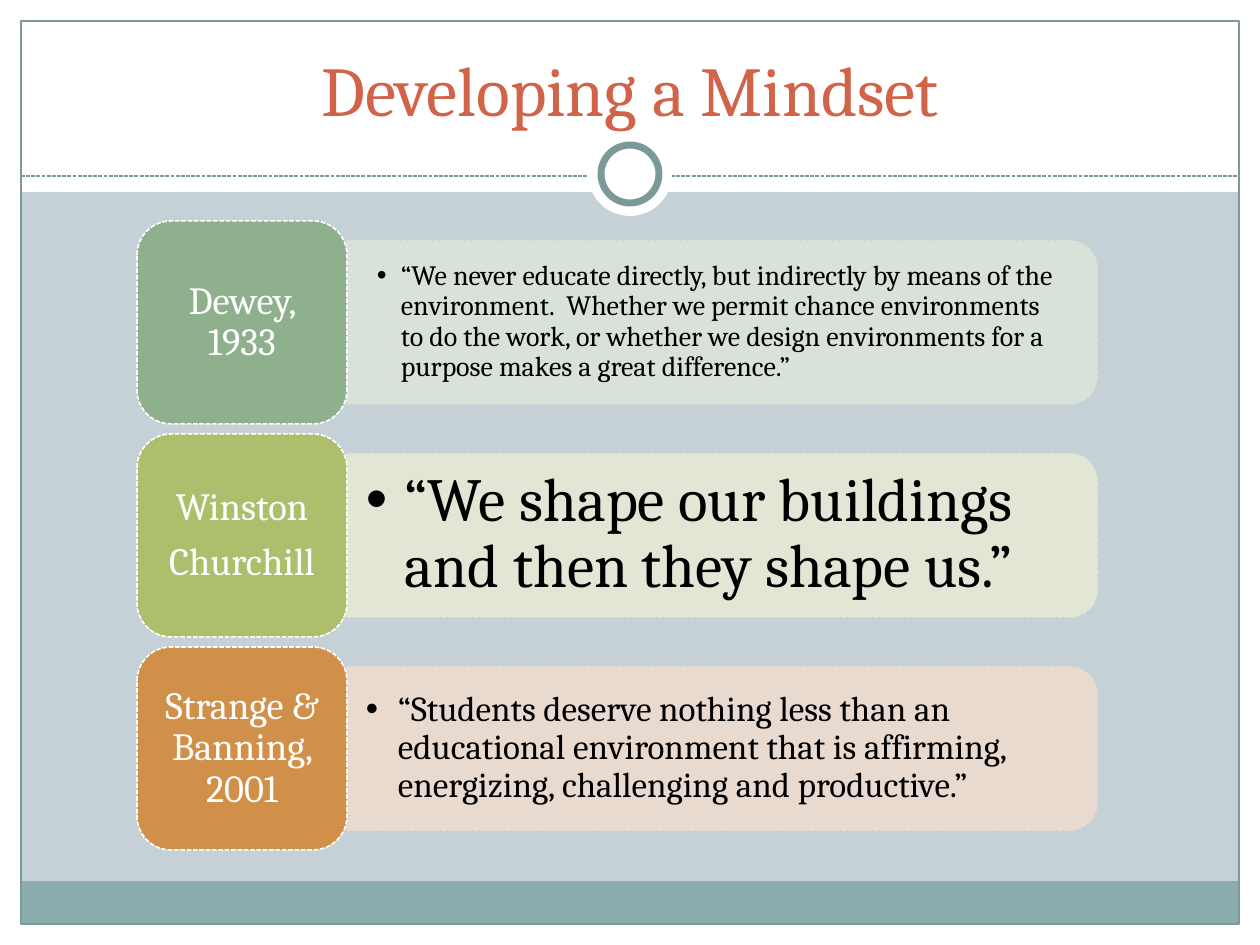
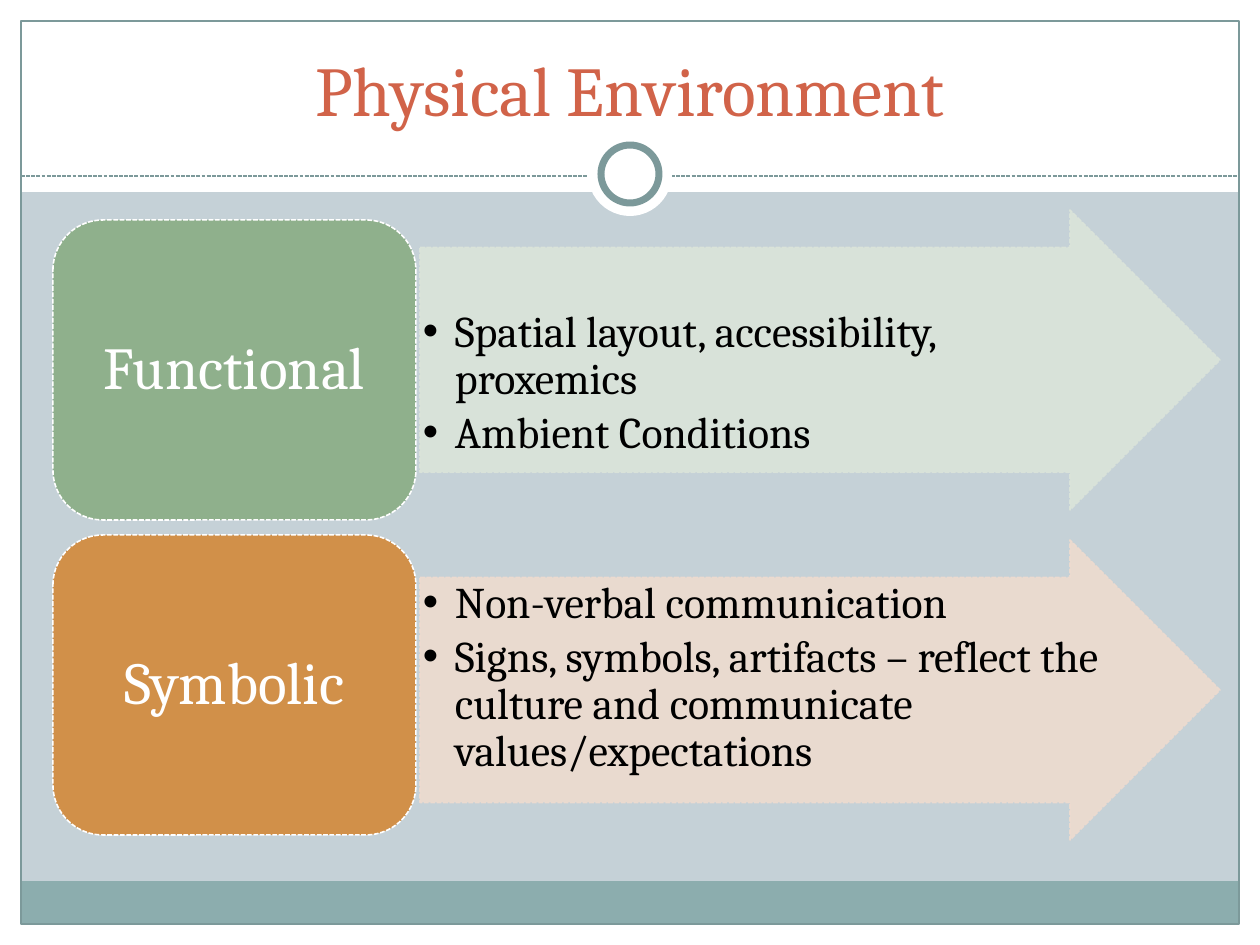
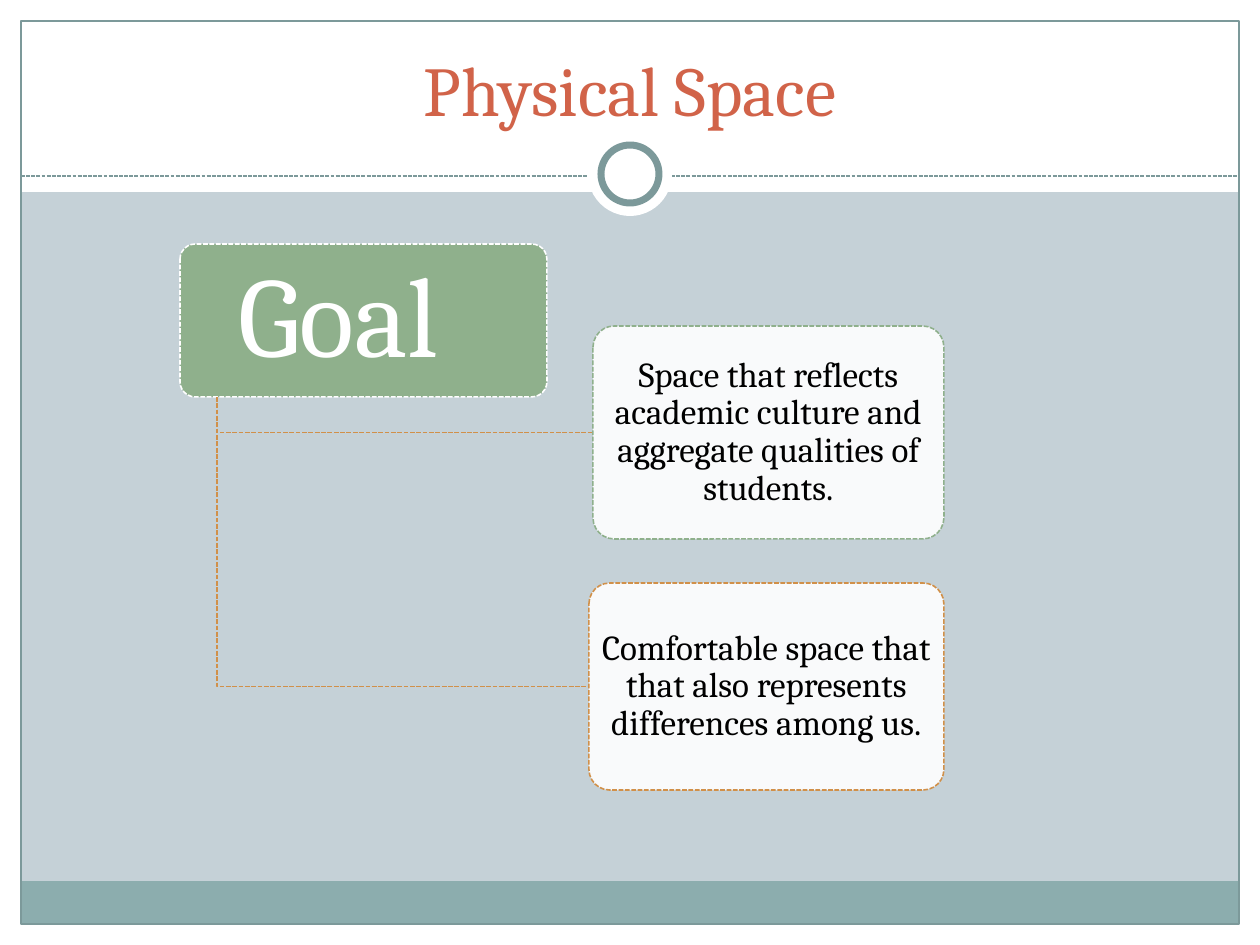
from pptx import Presentation
from pptx.dml.color import RGBColor
from pptx.enum.dml import MSO_LINE as Dash
from pptx.enum.shapes import MSO_CONNECTOR as Conn, MSO_SHAPE as Kind
from pptx.enum.text import MSO_ANCHOR as Anchor, PP_ALIGN as Align
from pptx.oxml.ns import qn
from pptx.util import Emu, Pt
from lxml.etree import SubElement as Sub

# Colours and font
WHITE = RGBColor(0xFF, 0xFF, 0xFF)
BLACK = RGBColor(0x00, 0x00, 0x00)
BACK = RGBColor(0xC5, 0xD1, 0xD7)
BAND = RGBColor(0x8C, 0xAD, 0xAE)
RULE = RGBColor(0x7C, 0x99, 0x9A)
RED = RGBColor(0xD1, 0x63, 0x49)
GREEN = RGBColor(0x8F, 0xB0, 0x8C)
LIME = RGBColor(0xAD, 0xBF, 0x6C)
OCHRE = RGBColor(0xD1, 0x90, 0x49)
MINT = RGBColor(0xDB, 0xE4, 0xDA)
CREAM = RGBColor(0xE6, 0xE9, 0xD5)
PEACH = RGBColor(0xEE, 0xDB, 0xCF)
FONT = "Cambria"

# Content: label, colour, quote, tint, size, indent, side and top inset
QUOTES = [
    (["Dewey, 1933"], GREEN,
     "“We never educate directly, but indirectly by means of the environment.  "
     "Whether we permit chance environments to do the work, or whether we "
     "design environments for a purpose makes a great difference.”",
     MINT, 16, 24, 30, 15),
    (["Winston", "Churchill"], LIME,
     "“We shape our buildings and then they shape us.”",
     CREAM, 35, 39, 19, 9),
    (["Strange & Banning, 2001"], OCHRE,
     "“Students deserve nothing less than an educational environment that is "
     "affirming, energizing, challenging and productive.”",
     PEACH, 20, 32, 19, 9),
]
# Label, colour, points, tint, label top, arrow top, inset above the points
ASPECTS = [
    ("Functional", GREEN, ["Spatial layout, accessibility, proxemics",
                           "Ambient Conditions"], MINT, 220, 210, 62),
    ("Symbolic", OCHRE, ["Non-verbal communication",
                         "Signs, symbols, artifacts – reflect the culture and "
                         "communicate values/expectations"],
     PEACH, 535, 540, 3),
]
# Text, edge colour, place
GOALS = [
    ("Space that reflects academic culture and aggregate qualities of students.",
     GREEN, (593, 326, 351, 213)),
    ("Comfortable space that that also represents differences among us.",
     OCHRE, (589, 583, 355, 207)),
]

# Page, in px
WIDE, HIGH = 1260, 945
EDGE, TOP = 21, 192
SCALE = 914400 / 126


def px(n):
    return Emu(round(n * SCALE))


def stroke(line, color, width, dashed):
    line.color.rgb = color
    line.width = Pt(width)
    if dashed:
        line.dash_style = Dash.SQUARE_DOT


def box(slide, kind, place, fill=None, edge=None, width=0.9, dashed=True,
        adj=(), alpha=None):
    """Add a shape; alpha applies to every part in the fill colour."""
    shape = slide.shapes.add_shape(kind, *map(px, place))
    shape.shadow.inherit = False
    for i, part in enumerate(adj):
        shape.adjustments[i] = part
    if fill is None:
        shape.fill.background()
    else:
        shape.fill.solid()
        shape.fill.fore_color.rgb = fill
    if edge is None:
        shape.line.fill.background()
    else:
        stroke(shape.line, edge, width, dashed)
    if alpha:
        for tone in list(shape._element.spPr.iter(qn("a:srgbClr"))):
            if tone.get("val") == str(fill):
                Sub(tone, qn("a:alpha"), val=str(alpha * 1000))
    return shape


def write(shape, lines, size, color, inset, anchor=Anchor.MIDDLE,
          indent=0, after=0.35, space=0.9):
    """Fill a shape with text; an indent makes the lines bullets."""
    frame = shape.text_frame
    frame.word_wrap = True
    frame.vertical_anchor = anchor
    (frame.margin_left, frame.margin_top,
     frame.margin_right, frame.margin_bottom) = map(px, inset)
    for i, line in enumerate(lines):
        para = frame.add_paragraph() if i else frame.paragraphs[0]
        para.alignment = Align.LEFT if indent else Align.CENTER
        para.line_spacing = space
        para.space_after = Pt(size * after)
        if indent:
            props = para._p.get_or_add_pPr()
            props.set("marL", str(px(indent)))
            props.set("indent", str(px(-indent)))
            Sub(props, qn("a:buFont"), typeface="Arial")
            Sub(props, qn("a:buChar"), char="•")
        run = para.add_run()
        run.text = line
        run.font.name = FONT
        run.font.size = Pt(size)
        run.font.color.rgb = color


def text(slide, place, *args, **opts):
    write(slide.shapes.add_textbox(*map(px, place)), *args, **opts)


def start(deck, title):
    """Add a slide with the shared bands, frame, ring and title."""
    slide = deck.slides.add_slide(deck.slide_layouts[6])
    slide.background.fill.solid()
    slide.background.fill.fore_color.rgb = BACK
    low = HIGH - EDGE
    for place, fill in [((0, low, WIDE, EDGE), WHITE),
                        ((0, 0, WIDE, TOP), WHITE),
                        ((0, 0, EDGE, HIGH), WHITE),
                        ((WIDE - EDGE, 0, EDGE, HIGH), WHITE),
                        ((EDGE, 881, WIDE - 2 * EDGE, 43), BAND)]:
        box(slide, Kind.RECTANGLE, place, fill)
    box(slide, Kind.RECTANGLE, (EDGE, EDGE, WIDE - 2 * EDGE, low - EDGE),
        edge=RULE, width=0.75, dashed=False)
    rule = slide.shapes.add_connector(
        Conn.STRAIGHT, px(EDGE), px(176), px(WIDE - EDGE), px(176))
    stroke(rule.line, RULE, 0.75, True)
    Sub(rule._element.spPr, qn("a:effectLst"))
    box(slide, Kind.OVAL, (588, 132, 84, 84), WHITE)
    box(slide, Kind.OVAL, (601, 145, 58, 58), WHITE, RULE, 4, False)
    text(slide, (42, 31, 1176, 105), [title], 40, RED, (13, 6, 13, 6),
         anchor=Anchor.BOTTOM, after=0, space=1)
    return slide


def mindset(deck):
    slide = start(deck, "Developing a Mindset")
    left, wide, high, step = 347, 750, 163, 213
    for i, (label, color, quote, tint, size, indent, side, top) in enumerate(QUOTES):
        y = 241 + i * step
        # The bar stands upright and is turned about its centre
        bar = box(slide, Kind.ROUND_2_SAME_RECTANGLE,
                  (left + (wide - high) / 2, y - (wide - high) / 2, high, wide),
                  tint, tint, alpha=90)
        bar.rotation = 90
        text(slide, (left, y + 8, 742, 146), [quote], size, BLACK,
             (side, top, side, top), indent=indent, after=0.15)
        name = box(slide, Kind.ROUNDED_RECTANGLE,
                   (left - 210, y - 20, 210, high + 40), color, WHITE)
        write(name, label, 22, WHITE, (11, 6, 11, 6))


def physical(deck):
    slide = start(deck, "Physical Environment")
    for label, color, points, tint, y, tip, above in ASPECTS:
        arrow = box(slide, Kind.RIGHT_ARROW, (420, tip, 800, 300), tint, tint,
                    adj=(0.75, 0.5), alpha=90)
        write(arrow, points, 25, BLACK, (3, above, 3, 3), Anchor.TOP,
              indent=32, after=0.15)
        name = box(slide, Kind.ROUNDED_RECTANGLE, (53, y, 363, 300), color, WHITE)
        write(name, [label], 34, WHITE, (18, 9, 18, 9))


def space(deck):
    slide = start(deck, "Physical Space")
    x, y, wide, high = 180, 244, 367, 153
    goal = box(slide, Kind.ROUNDED_RECTANGLE, (x, y, wide, high), GREEN, WHITE,
               adj=(0.1,))
    write(goal, ["Goal"], 65, WHITE, (18, 11, 68, 11))
    stem, foot = x + 37, y + high
    for line, edge, place in GOALS:
        # Link from the goal to the middle of the leaf
        mid = place[1] + place[3] / 2
        path = slide.shapes.build_freeform(px(stem), px(foot))
        path.add_line_segments([(px(stem), px(mid)), (px(place[0]), px(mid))],
                               close=False)
        link = path.convert_to_shape()
        link.shadow.inherit = False
        link.fill.background()
        stroke(link.line, OCHRE, 0.9, True)
        leaf = box(slide, Kind.ROUNDED_RECTANGLE, place, WHITE, edge,
                   adj=(0.1,), alpha=90)
        write(leaf, [line], 20, BLACK, (5, 4, 5, 4))


def main():
    deck = Presentation()
    deck.slide_width, deck.slide_height = px(WIDE), px(HIGH)
    for build in (mindset, physical, space):
        build(deck)
    deck.save("out.pptx")


if __name__ == "__main__":
    main()
